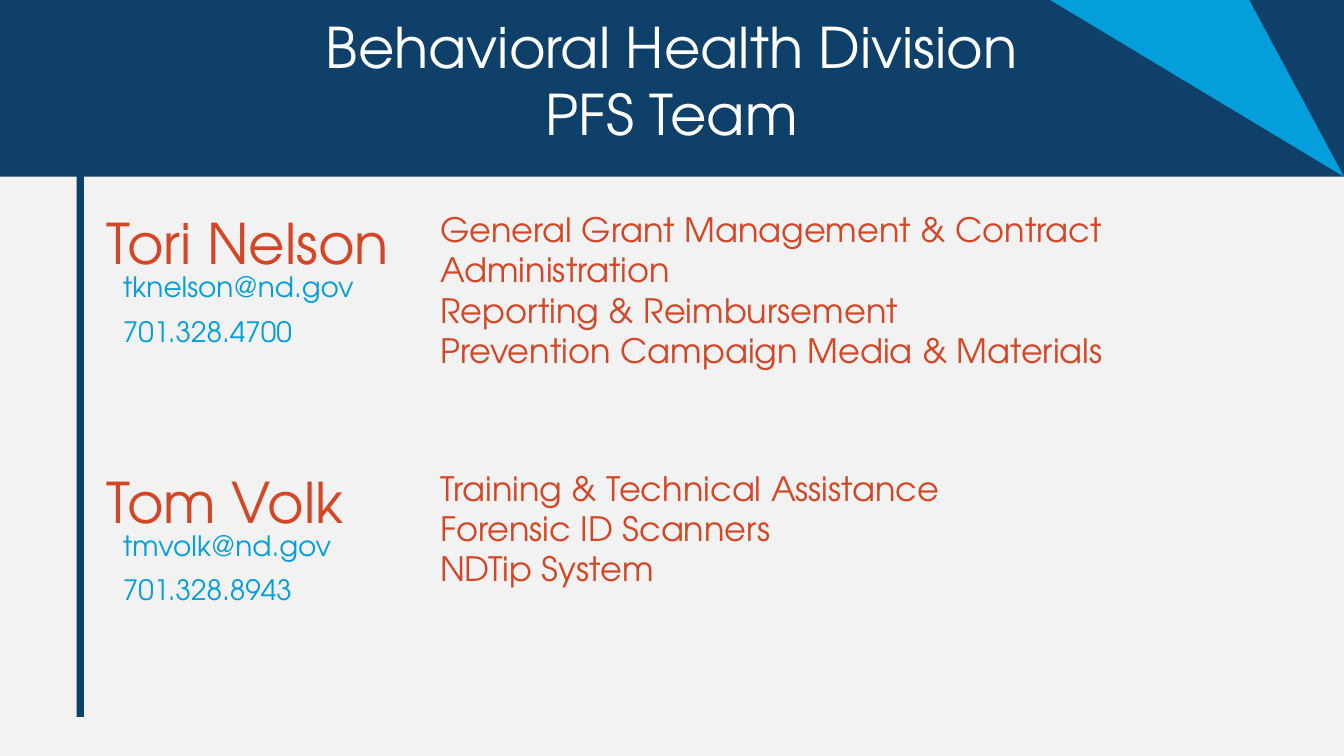
from pptx import Presentation
from pptx.dml.color import RGBColor
from pptx.enum.shapes import MSO_SHAPE
from pptx.enum.text import MSO_ANCHOR, MSO_AUTO_SIZE, PP_ALIGN
from pptx.oxml.ns import qn
from pptx.util import Pt

PX = 9144  # EMU per px: 100 px to the inch
NAVY, SKY, RUST, WHITE, PAPER = "0E406A", "049FDA", "D34727", "FFFFFF", "F2F2F2"

TEAM = [
    ("Tori Nelson", ["tknelson@nd.gov", "701.328.4700"],
     ["General Grant Management & Contract Administration",
      "Reporting & Reimbursement", "Prevention Campaign Media & Materials"]),
    ("Tom Volk", ["tmvolk@nd.gov", "701.328.8943"],
     ["Training & Technical Assistance", "Forensic ID Scanners", "NDTip System"]),
]
FIRST_TOP, MEMBER_PITCH, CONTACT_DROP = 311, 385, 90


def color(hex_code):
    return RGBColor.from_string(hex_code)


class TeamSlide:
    font = "TeX Gyre Adventor"

    def __init__(self, slide):
        self.slide = slide
        slide.background.fill.solid()
        slide.background.fill.fore_color.rgb = color(PAPER)

    def paint(self, shape, hex_code):
        """Fill the shape and send it behind everything else."""
        shape.shadow.inherit = False
        shape.fill.solid()
        shape.fill.fore_color.rgb = color(hex_code)
        shape.line.fill.background()
        self.slide.shapes._spTree.insert(2, shape._element)

    def rectangle(self, left, top, width, height, hex_code):
        box = [v * PX for v in (left, top, width, height)]
        self.paint(self.slide.shapes.add_shape(MSO_SHAPE.RECTANGLE, *box), hex_code)

    def polygon(self, points, hex_code):
        outline = self.slide.shapes.build_freeform(*points[0], scale=PX)
        outline.add_line_segments(points[1:], close=True)
        self.paint(outline.convert_to_shape(), hex_code)

    def textbox(self, box, lines, size, hex_code, **formats):
        holder = self.slide.shapes.add_textbox(0, 0, 0, 0)
        self.set_text(holder, box, lines, size, hex_code, **formats)

    def placeholder(self, idx, box, lines, size, hex_code, **formats):
        holder = self.slide.placeholders[idx]
        self.set_text(holder, box, lines, size, hex_code, **formats)

    def set_text(self, holder, box, lines, size, hex_code, gap=0, **formats):
        """Place the holder and set its lines; gap is the points around each paragraph."""
        for side, value in zip(("left", "top", "width", "height"), box):
            setattr(holder, side, value * PX)
        frame = holder.text_frame
        frame.text = "\n".join(lines)
        frame_format = dict(margin_left=0, margin_top=0, margin_right=0, margin_bottom=0,
                            word_wrap=True, auto_size=MSO_AUTO_SIZE.NONE,
                            vertical_anchor=MSO_ANCHOR.TOP)
        for name, value in frame_format.items():
            setattr(frame, name, value)
        for number, paragraph in enumerate(frame.paragraphs):
            properties = paragraph._p.get_or_add_pPr()
            properties.set("marL", "0")
            properties.set("indent", "0")
            properties.append(properties.makeelement(qn("a:buNone"), {}))
            spacing = dict(alignment=PP_ALIGN.LEFT, line_spacing=1.0,
                           space_before=Pt(gap if number else 0), space_after=Pt(gap))
            for name, value in (spacing | formats).items():
                setattr(paragraph, name, value)
            for run in paragraph.runs:
                font_format = dict(name=self.font, size=Pt(size), bold=False)
                for name, value in font_format.items():
                    setattr(run.font, name, value)
                run.font.color.rgb = color(hex_code)


def main():
    deck = Presentation()
    deck.slide_width, deck.slide_height = 2000 * PX, 1125 * PX
    comparison_layout = deck.slide_layouts[4]
    page = TeamSlide(deck.slides.add_slide(comparison_layout))

    page.polygon([(1563, 0), (1859, 0), (2000, 263)], SKY)
    page.rectangle(114, 221, 11, 846, NAVY)
    page.rectangle(0, 0, 2000, 263, NAVY)
    page.placeholder(0, (112, 18, 1775, 202), ["Behavioral Health Division", "PFS Team"],
                     60, WHITE, alignment=PP_ALIGN.CENTER, line_spacing=Pt(72))

    for row, (member, contact, duties) in enumerate(TEAM):
        top = FIRST_TOP + row * MEMBER_PITCH
        page.textbox((158, top, 497, 111), [member], 60, RUST, line_spacing=Pt(72))
        page.placeholder(2 * row + 1, (183, top + CONTACT_DROP, 414, 118), contact,
                         30, SKY, gap=6)
        page.placeholder(2 * row + 2, (655, top, 1232, 186), duties,
                         36, RUST, line_spacing=Pt(43.2))

    deck.save("out.pptx")


if __name__ == "__main__":
    main()
